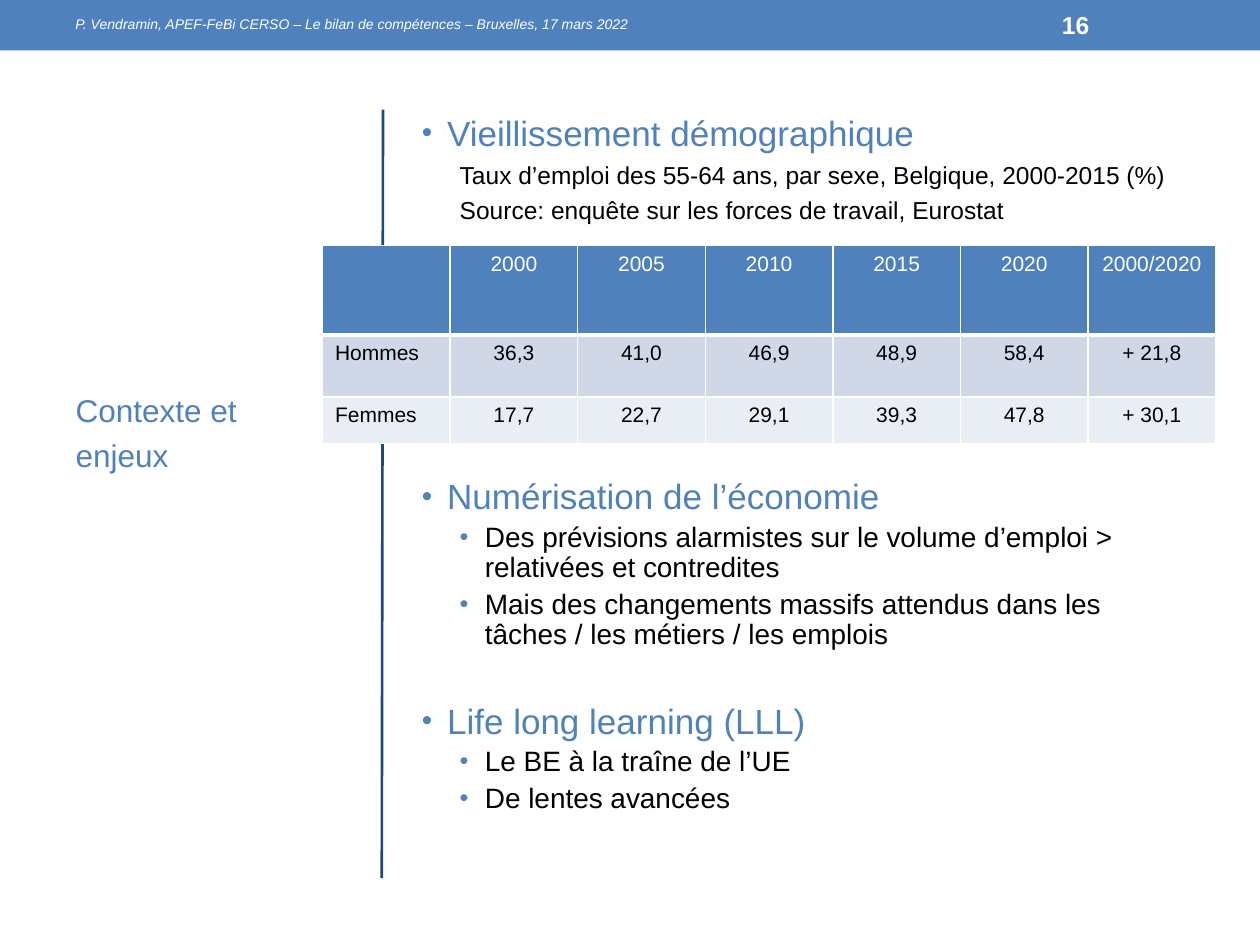
from pptx import Presentation
from pptx.dml.color import RGBColor
from pptx.enum.shapes import MSO_CONNECTOR as Connector, MSO_SHAPE as Shape
from pptx.enum.text import MSO_ANCHOR as Anchor, MSO_AUTO_SIZE as AutoSize, PP_ALIGN as Align
from pptx.oxml.ns import qn
from pptx.util import Inches, Pt
from lxml.etree import SubElement

COLORS = {
    "blue": "4F81BD",
    "navy": "1F497D",
    "white": "FFFFFF",
    "black": "000000",
    "band": "D0D8E8",
    "light band": "E9EDF4",
}

# Paragraph kinds of the body: font, bullet size in percent, indents, spacing
HEADING = dict(size=20, color="blue", bullet=85, left=0.2, hanging=0.2, line_spacing=0.9)
CAPTION = dict(size=14, left=0.3)
POINT = dict(size=16, bullet=90, left=0.5, hanging=0.2, line_spacing=0.9)

BODY = [
    ("Vieillissement démographique", HEADING, 0),
    ("Taux d’emploi des 55-64 ans, par sexe, Belgique, 2000-2015 (%)", CAPTION, 3.5),
    ("Source: enquête sur les forces de travail, Eurostat", CAPTION, 3.5),
    ("Numérisation de l’économie", HEADING, 145.7),
    ("Des prévisions alarmistes sur le volume d’emploi > relativées et contredites", POINT, 3.5),
    ("Mais des changements massifs attendus dans les tâches / les métiers / les emplois",
     POINT, 3.5),
    ("Life long learning (LLL)", HEADING, 30.5),
    ("Le BE à la traîne de l’UE", POINT, 3.5),
    ("De lentes avancées", POINT, 3.5),
]

EMPLOYMENT_RATES = [
    ["", "2000", "2005", "2010", "2015", "2020", "2000/2020"],
    ["Hommes", "36,3", "41,0", "46,9", "48,9", "58,4", "+ 21,8"],
    ["Femmes", "17,7", "22,7", "29,1", "39,3", "47,8", "+ 30,1"],
]


def rgb(name):
    return RGBColor.from_string(COLORS[name])


def set_attributes(target, values):
    for name, value in values.items():
        setattr(target, name, value)


class SlideBuilder:
    """Holds the slide and its text style."""

    font = "Arial"

    def __init__(self, slide):
        self.slide = slide

    def format_paragraph(self, paragraph, text, size, color="black", bold=False, italic=False,
                         bullet=None, left=0, hanging=0, **layout):
        run = paragraph.add_run()
        run.text = text
        set_attributes(run.font, dict(name=self.font, size=Pt(size), bold=bold, italic=italic))
        run.font.color.rgb = rgb(color)
        set_attributes(paragraph, layout)
        properties = paragraph._p.get_or_add_pPr()
        properties.set("marL", str(Inches(left)))
        properties.set("indent", str(-Inches(hanging)))
        if bullet:
            bullet_color = SubElement(properties, qn("a:buClr"))
            SubElement(bullet_color, qn("a:srgbClr"), val=COLORS["blue"])
            SubElement(properties, qn("a:buSzPct"), val=str(bullet * 1000))
            SubElement(properties, qn("a:buFont"), typeface=self.font)
            SubElement(properties, qn("a:buChar"), char="•")

    def fill_frame(self, frame, paragraphs, **frame_format):
        """Write (text, format) pairs, one paragraph each."""
        set_attributes(frame, dict(word_wrap=True, auto_size=AutoSize.NONE) | frame_format)
        for index, (text, style) in enumerate(paragraphs):
            paragraph = frame.add_paragraph() if index else frame.paragraphs[0]
            self.format_paragraph(paragraph, text, **style)

    def title(self, lines, box, margin_top):
        title = self.slide.shapes.title
        set_attributes(title, dict(zip(("left", "top", "width", "height"), map(Inches, box))))
        style = dict(size=18, color="blue", alignment=Align.LEFT, space_after=Pt(4.4))
        self.fill_frame(title.text_frame, [(line, style) for line in lines],
                        vertical_anchor=Anchor.TOP, margin_top=Inches(margin_top))

    def text(self, paragraphs, box, anchor=Anchor.TOP):
        shape = self.slide.shapes.add_textbox(*map(Inches, box))
        self.fill_frame(shape.text_frame, paragraphs, vertical_anchor=anchor)

    def bar(self, box, color):
        shape = self.slide.shapes.add_shape(Shape.RECTANGLE, *map(Inches, box))
        shape.shadow.inherit = False
        shape.fill.solid()
        shape.fill.fore_color.rgb = rgb(color)
        shape.line.fill.background()

    def line(self, ends, color, width):
        line = self.slide.shapes.add_connector(Connector.STRAIGHT, *map(Inches, ends))
        line.line.color.rgb = rgb(color)
        line.line.width = Pt(width)
        SubElement(line._element.spPr, qn("a:effectLst"))

    def cell_borders(self, cell, widths):
        properties = cell._tc.get_or_add_tcPr()
        for side, width in widths.items():
            border = SubElement(properties, qn(f"a:ln{side}"), w=str(Pt(width)))
            fill = SubElement(border, qn("a:solidFill"))
            SubElement(fill, qn("a:srgbClr"), val=COLORS["white"])

    def table(self, rows, box, heights, fills):
        frame = self.slide.shapes.add_table(len(rows), len(rows[0]), *map(Inches, box))
        table = frame.table
        table.horz_banding = False
        for column in table.columns:
            column.width = Inches(box[2] / len(rows[0]))
        for r, values in enumerate(rows):
            table.rows[r].height = Inches(heights[r])
            for c, value in enumerate(values):
                cell = table.cell(r, c)
                top, bottom = (3 if r == 1 else 1), (3 if r == 0 else 1)
                self.cell_borders(cell, dict(L=1, R=1, T=top, B=bottom))
                cell.fill.solid()
                cell.fill.fore_color.rgb = rgb(fills[r])
                if value:
                    self.format_paragraph(cell.text_frame.paragraphs[0], value, 12,
                                          "black" if r else "white",
                                          alignment=Align.CENTER if c else Align.LEFT)


def main():
    presentation = Presentation()
    presentation.slide_width, presentation.slide_height = Inches(10), Inches(7.5)
    title_only = presentation.slide_layouts[5]
    builder = SlideBuilder(presentation.slides.add_slide(title_only))

    builder.bar((0, 0, 10, 0.4), "blue")
    builder.line((3.04, 0.87, 3.03, 6.97), "navy", 1.5)
    builder.text([(text, style | dict(space_before=Pt(gap))) for text, style, gap in BODY],
                 (3.25, 0.87, 6.25, 6.1))
    builder.title(["Contexte et", "enjeux"], (0.5, 2.33, 2.34, 4.64), margin_top=0.77)

    footer = "P. Vendramin, APEF-FeBi CERSO – Le bilan de compétences – Bruxelles, 17 mars 2022"
    builder.text([(footer, dict(size=8, color="white", italic=True, line_spacing=0.9))],
                 (0.5, 0.02, 7.75, 0.36), Anchor.MIDDLE)
    builder.text([("16", dict(size=14, color="white", bold=True))],
                 (8.33, 0.02, 1.17, 0.36), Anchor.MIDDLE)
    builder.table(EMPLOYMENT_RATES, (2.56, 1.95, 7.09, 1.57), (0.71, 0.49, 0.37),
                  ("blue", "band", "light band"))
    presentation.save("out.pptx")


if __name__ == "__main__":
    main()
